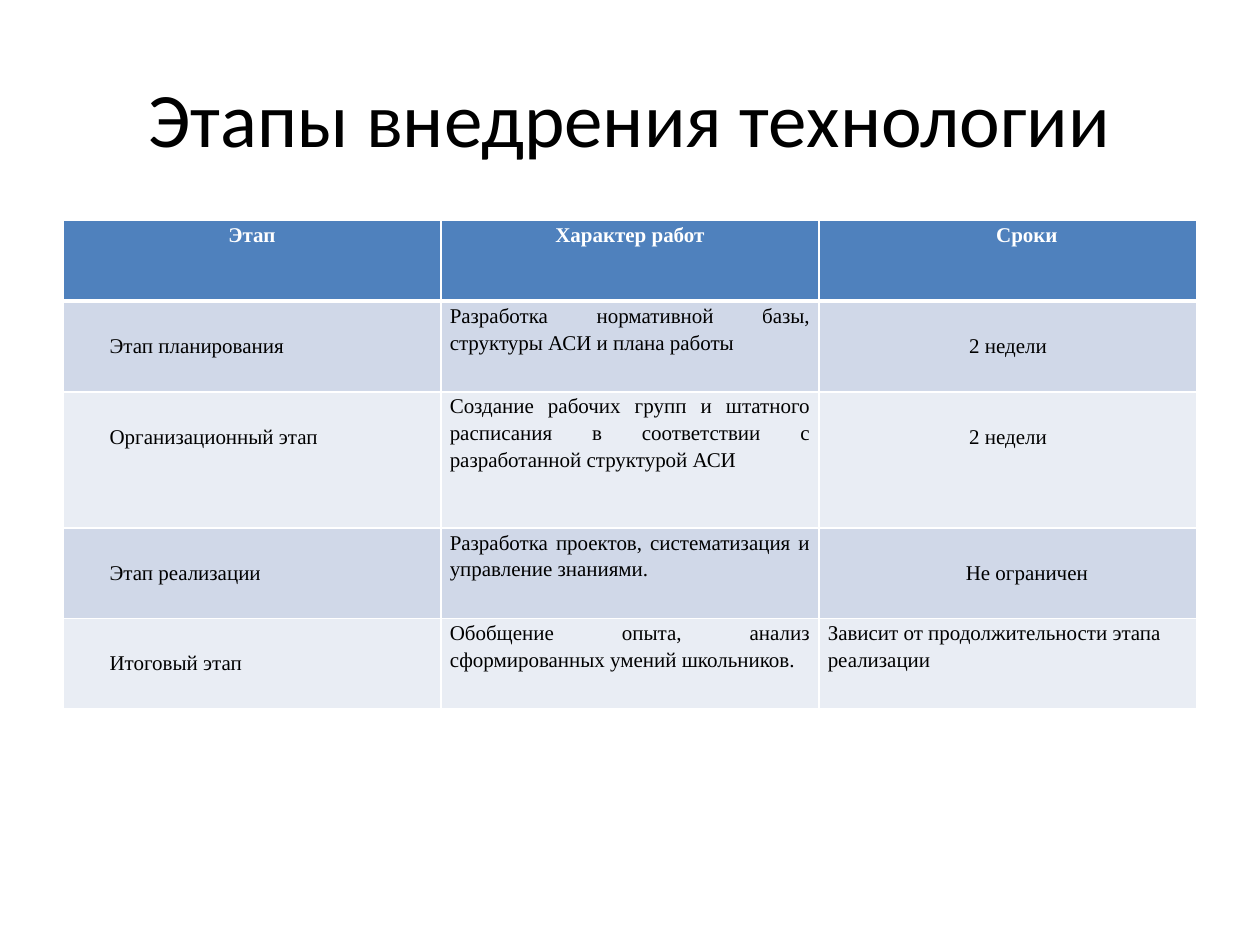
from lxml.etree import SubElement
from pptx import Presentation
from pptx.dml.color import RGBColor
from pptx.enum.text import MSO_ANCHOR, PP_ALIGN as Align
from pptx.oxml.ns import qn
from pptx.util import Pt

PX = 9144  # 100 px to the inch
COLORS = {
    "text": "000000",
    "white": "FFFFFF",
    "header": "4F81BD",
    "odd_row": "D0D8E8",
    "even_row": "E9EDF4",
}
INDENT = 30 * PX
LOWERED = 24 * PX  # pushes a cell's text down by one line


def color(name):
    return RGBColor.from_string(COLORS[name])


def add_border(cell, side, width):
    line = SubElement(cell._tc.get_or_add_tcPr(), qn(f"a:ln{side}"), w=str(Pt(width)))
    fill = SubElement(line, qn("a:solidFill"))
    SubElement(fill, qn("a:srgbClr"), val=COLORS["white"])


presentation = Presentation()
presentation.slide_width = 1000 * PX
presentation.slide_height = 750 * PX
slide = presentation.slides.add_slide(presentation.slide_layouts[5])

# Title
title = slide.shapes.title
title.left, title.top, title.width, title.height = 50 * PX, 30 * PX, 900 * PX, 125 * PX
title.text_frame.text = "Этапы внедрения технологии"
title.text_frame.vertical_anchor = MSO_ANCHOR.MIDDLE
paragraph = title.text_frame.paragraphs[0]
paragraph.alignment = Align.CENTER
paragraph.font.name = "Calibri"
paragraph.font.size = Pt(44)
paragraph.font.color.rgb = color("text")

# Table contents
rows = [
    ("Этап", "Характер работ", "Сроки"),
    ("Этап планирования", "Разработка нормативной базы, структуры АСИ и плана работы", "2 недели"),
    ("Организационный этап",
     "Создание рабочих групп и штатного расписания в соответствии с разработанной структурой АСИ",
     "2 недели"),
    ("Этап реализации", "Разработка проектов, систематизация и управление знаниями.", "Не ограничен"),
    ("Итоговый этап", "Обобщение опыта, анализ сформированных умений школьников.",
     "Зависит от продолжительности этапа реализации"),
]
row_heights = [64, 72, 108, 72, 72]
last_row = len(rows) - 1
indented_terms = ("Сроки", "Не ограничен")

# Table
table = slide.shapes.add_table(
    len(rows), 3, 50 * PX, 175 * PX, 900 * PX, sum(row_heights) * PX
).table
for column in table.columns:
    column.width = 300 * PX

for row_index, texts in enumerate(rows):
    table.rows[row_index].height = row_heights[row_index] * PX
    is_header = row_index == 0
    row_fill = "header" if is_header else "odd_row" if row_index % 2 else "even_row"

    for column_index, text in enumerate(texts):
        cell = table.cell(row_index, column_index)
        is_stage = column_index == 0 and not is_header
        is_last_term = column_index == 2 and row_index == last_row

        # Borders and fill, with a thick line under the header
        add_border(cell, "L", 1)
        add_border(cell, "R", 1)
        add_border(cell, "T", 3 if row_index == 1 else 1)
        add_border(cell, "B", 3 if is_header else 1)
        cell.fill.solid()
        cell.fill.fore_color.rgb = color(row_fill)

        # Margins
        lowered = not is_header and column_index != 1 and not is_last_term
        cell.margin_left = cell.margin_right = 7 * PX
        cell.margin_top = LOWERED if lowered else 0
        cell.margin_bottom = 0

        # Text
        cell.text = text
        paragraph = cell.text_frame.paragraphs[0]
        if is_last_term:
            paragraph.alignment = Align.LEFT
        elif is_header or column_index == 2:
            paragraph.alignment = Align.CENTER
        else:
            paragraph.alignment = Align.JUSTIFY
        if is_stage or text in indented_terms:
            paragraph._p.get_or_add_pPr().set("indent", str(INDENT))
        paragraph.line_spacing = 1.15
        paragraph.font.name = "Times New Roman"
        paragraph.font.size = Pt(12)
        paragraph.font.bold = is_header
        paragraph.font.color.rgb = color("white" if is_header else "text")

presentation.save("out.pptx")
